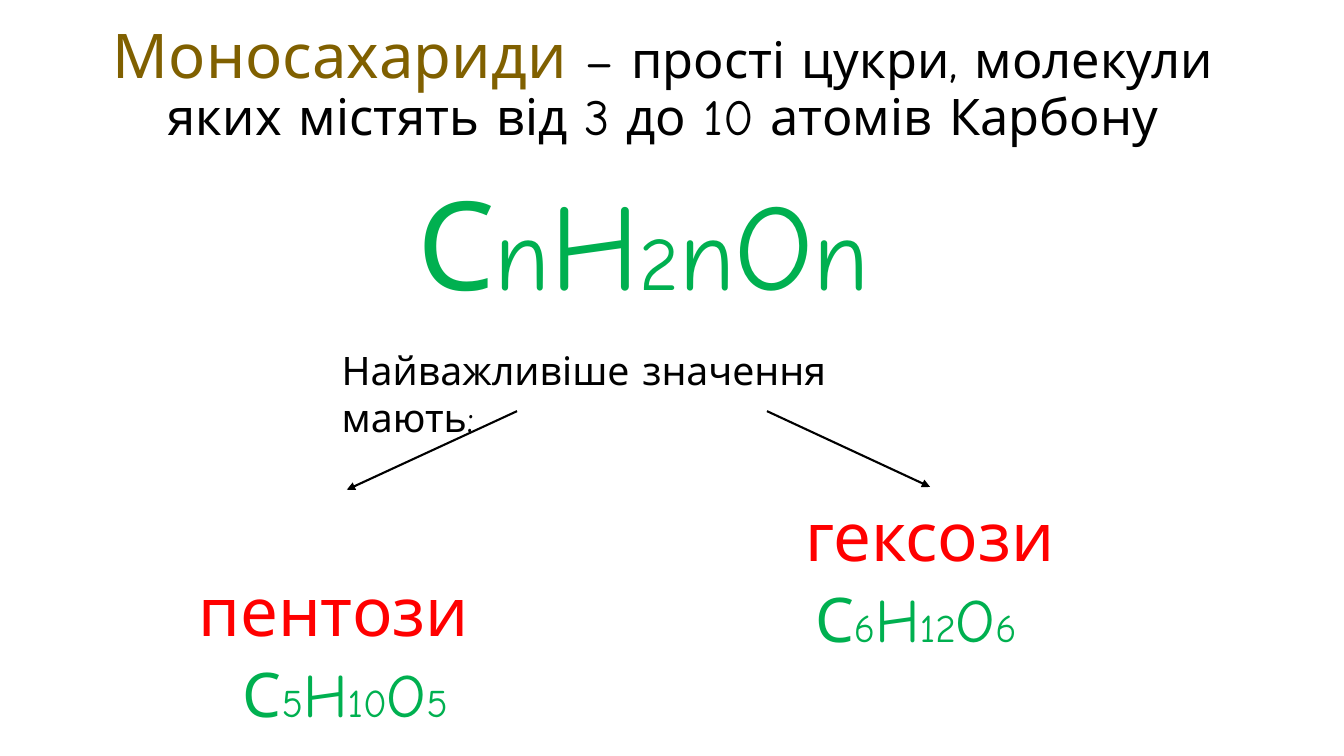
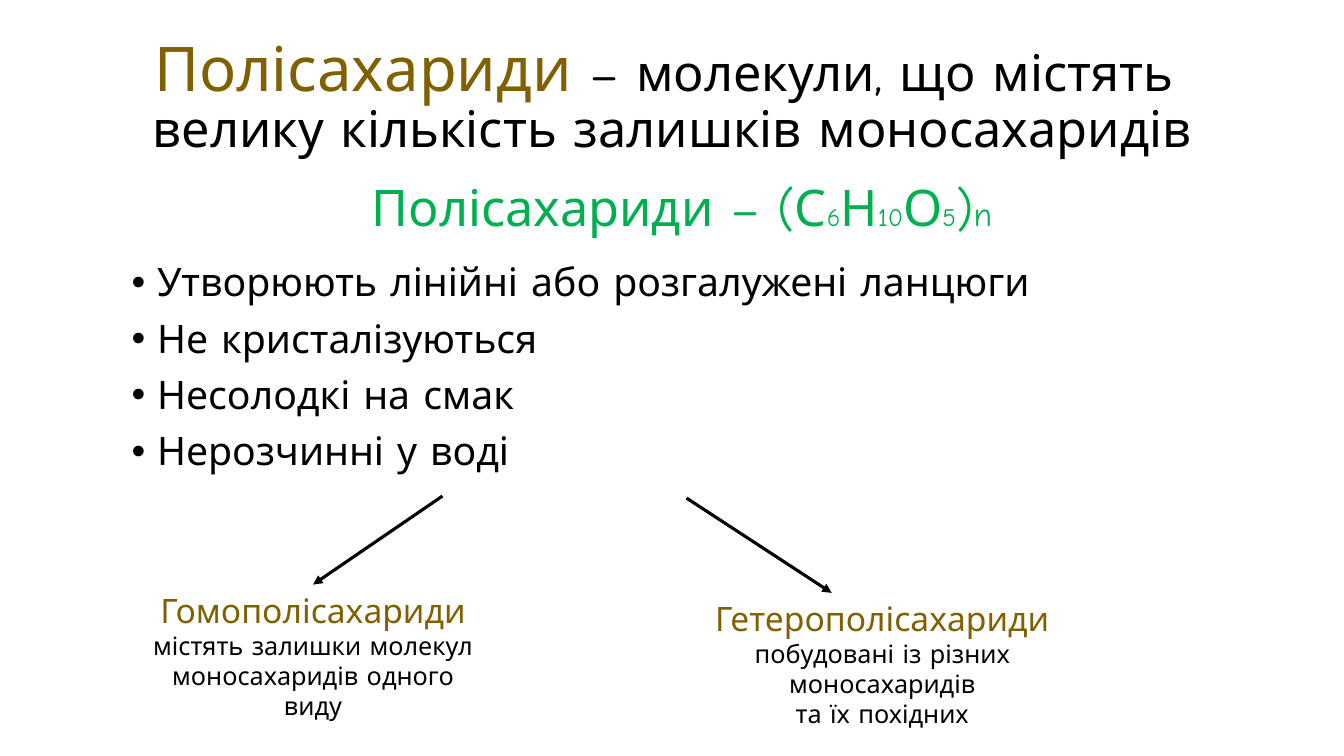
from dataclasses import dataclass

from lxml.etree import SubElement
from pptx import Presentation
from pptx.dml.color import RGBColor
from pptx.enum.shapes import MSO_CONNECTOR
from pptx.enum.text import MSO_ANCHOR, MSO_AUTO_SIZE, PP_ALIGN
from pptx.oxml.ns import qn
from pptx.util import Cm, Pt


@dataclass(frozen=True)
class Theme:
    font: str = "Comic Neue"
    black: str = "000000"
    gold: str = "806000"
    green: str = "00B050"
    red: str = "FF0000"
    term: int = 44
    title: int = 36
    group: int = 48
    body: int = 28
    kind: int = 24
    note: int = 18
    tight: float = 0.9
    gap: int = 10


THEME = Theme()


def add_text(p, text, size=THEME.body, color=THEME.black):
    """Append formatted text; each newline becomes a line break."""
    for i, part in enumerate(text.split("\n")):
        if i:
            p.add_line_break()
        r = p.add_run()
        r.text = part
        r.font.name = THEME.font
        r.font.size = Pt(size)
        r.font.color.rgb = RGBColor.from_string(color)


class Deck:
    def __init__(self):
        self.prs = Presentation()
        self.prs.slide_width, self.prs.slide_height = Cm(33.87), Cm(19.05)
        self.s = None

    def slide(self, left, top, term, definition):
        """Start a slide whose title is a term and its definition."""
        self.s = self.prs.slides.add_slide(self.prs.slide_layouts[5])
        sp = self.s.shapes.title
        sp.left, sp.top, sp.width, sp.height = Cm(left), Cm(top), Cm(29.21), Cm(3.68)
        tf = sp.text_frame
        tf.word_wrap = True
        tf.auto_size = MSO_AUTO_SIZE.NONE
        tf.vertical_anchor = MSO_ANCHOR.MIDDLE
        p = tf.paragraphs[0]
        p.alignment = PP_ALIGN.CENTER
        p.line_spacing = THEME.tight
        add_text(p, term, size=THEME.term, color=THEME.gold)
        add_text(p, " – " + definition, size=THEME.title)

    def box(self, left, top, width, height):
        sp = self.s.shapes.add_textbox(Cm(left), Cm(top), Cm(width), Cm(height))
        sp.text_frame.word_wrap = True
        return sp

    def tighten(self, p):
        p.line_spacing = THEME.tight
        p.space_before = Pt(THEME.gap)

    def line(self, left, top, width, height, runs, color=THEME.black):
        """A one-paragraph box; runs are (text, size) pairs."""
        p = self.box(left, top, width, height).text_frame.paragraphs[0]
        for text, size in runs:
            add_text(p, text, size=size, color=color)
        return p

    def sugar(self, left, top, name, formula, indent):
        """A red group name with its green formula below."""
        tf = self.box(left, top, 8.6, 4.3).text_frame
        add_text(tf.paragraphs[0], name, size=THEME.group, color=THEME.red)
        p = tf.add_paragraph()
        self.tighten(p)
        p._p.get_or_add_pPr().set("marL", str(Cm(indent)))
        for part in formula:
            size = THEME.body if part.isdigit() else THEME.term
            add_text(p, part, size=size, color=THEME.green)

    def bullets(self, left, top, width, height, items):
        tf = self.box(left, top, width, height).text_frame
        for i, item in enumerate(items):
            p = tf.add_paragraph() if i else tf.paragraphs[0]
            self.tighten(p)
            pPr = p._p.get_or_add_pPr()
            pPr.set("marL", str(Cm(0.64)))
            pPr.set("indent", str(-Cm(0.64)))
            SubElement(pPr, qn("a:buFont")).set("typeface", "Arial")
            SubElement(pPr, qn("a:buChar")).set("char", "•")
            add_text(p, item)

    def kind(self, left, top, width, name, notes):
        """A centred kind of polysaccharide with its description."""
        sp = self.box(left, top, width, 2.82)
        tf = sp.text_frame
        add_text(tf.paragraphs[0], name, size=THEME.kind, color=THEME.gold)
        for note in notes:
            add_text(tf.add_paragraph(), note, size=THEME.note)
        for p in tf.paragraphs:
            p.alignment = PP_ALIGN.CENTER
        return sp

    def arrow(self, x1, y1, x2, y2, weight, target=None):
        cn = self.s.shapes.add_connector(
            MSO_CONNECTOR.STRAIGHT, Cm(x1), Cm(y1), Cm(x2), Cm(y2))
        if target is not None:
            cn.end_connect(target, 0)
        cn.line.color.rgb = RGBColor.from_string(THEME.black)
        cn.line.width = Pt(weight)
        SubElement(cn.line._get_or_add_ln(), qn("a:tailEnd")).set("type", "triangle")
        SubElement(cn._element.spPr, qn("a:effectLst"))


def monosaccharides(deck):
    deck.slide(2.11, 0.33, "Моносахариди",
               "прості цукри, молекули яких містять від 3 до 10 атомів Карбону")
    # General formula
    p = deck.line(10.26, 4.52, 12.52, 3.63,
                  [("С", 88), ("n", 72), ("H", 88), ("2", 54), ("n", 72),
                   ("O", 88), ("n", 72)], color=THEME.green)
    deck.tighten(p)
    # Two main groups
    deck.line(8.36, 8.61, 15.72, 1.45,
              [("Найважливіше значення мають:", THEME.body)])
    deck.arrow(13.03, 10.36, 8.74, 12.34, 1.5)
    deck.arrow(19.33, 10.36, 23.44, 12.27, 1.5)
    deck.sugar(4.75, 14.22, "пентози", ["С", "5", "H", "10", "O", "5"], 1.12)
    deck.sugar(20.04, 12.34, "гексози", ["С", "6", "H", "12", "O", "6"], 0.25)


def polysaccharides(deck):
    deck.slide(2.34, 0.64, "Полісахариди",
               "молекули, що містять \nвелику кількість залишків моносахаридів")
    # General formula
    big, small = THEME.title, THEME.note
    deck.line(9.12, 4.32, 16.38, 1.8,
              [("Полісахариди – (С", big), ("6", small), ("Н", big), ("10", small),
               ("О", big), ("5", small), (")", big), ("n", THEME.kind)],
              color=THEME.green)
    # Properties
    deck.bullets(3.07, 6.5, 23.14, 6.05,
                 ["Утворюють лінійні або розгалужені ланцюги", "Не кристалізуються",
                  "Несолодкі на смак", "Нерозчинні у воді"])
    # Two kinds
    homo = deck.kind(3.33, 14.73, 9.12, "Гомополісахариди",
                     ["містять залишки молекул", "моносахаридів одного виду"])
    deck.kind(16.48, 14.94, 11.51, "Гетерополісахариди",
              ["побудовані із різних моносахаридів", "та їх похідних"])
    deck.arrow(11.15, 12.5, 7.89, 14.73, 2.25, target=homo)
    deck.arrow(17.3, 12.55, 20.96, 14.94, 2.25)


def main():
    deck = Deck()
    monosaccharides(deck)
    polysaccharides(deck)
    deck.prs.save("out.pptx")


if __name__ == "__main__":
    main()
